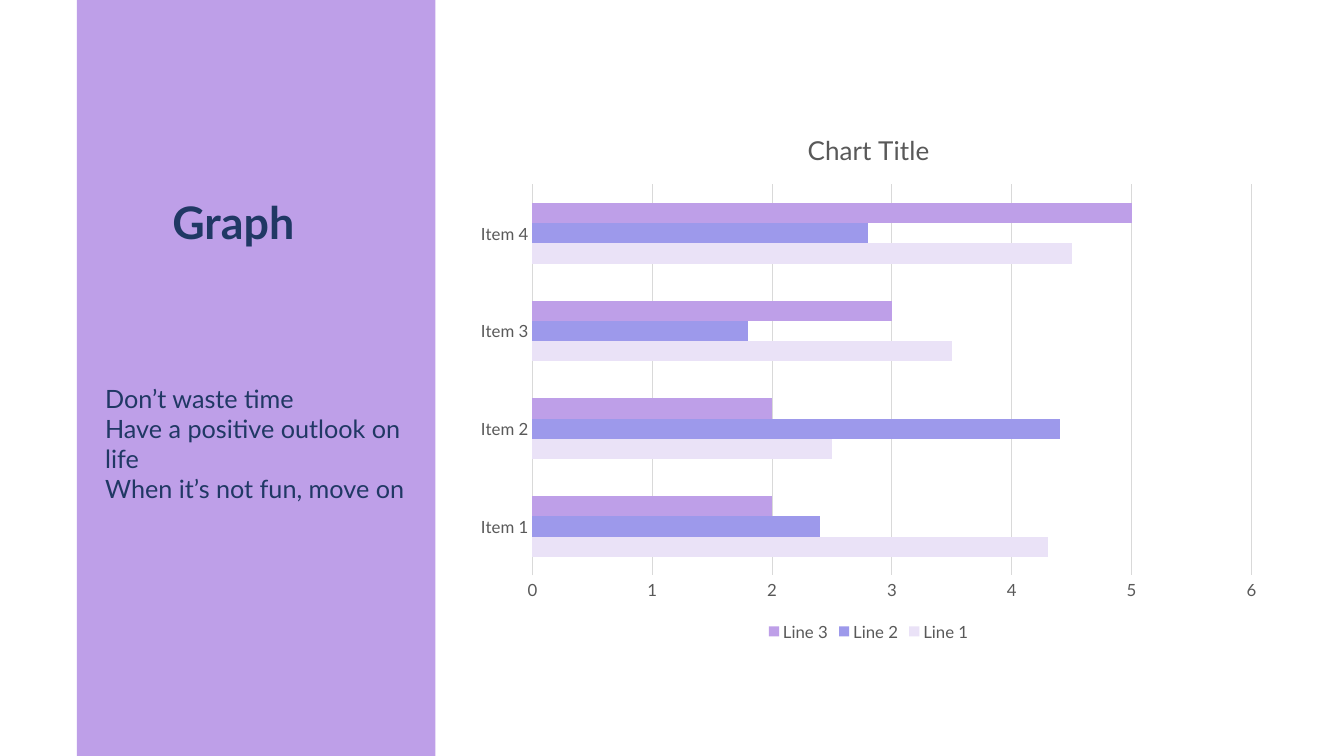
"""Build a slide with a coloured side panel and a clustered bar chart."""
import pptx
import pptx.chart.data
import pptx.dml.color
import pptx.enum.chart
import pptx.enum.shapes
import pptx.util

Pt = pptx.util.Pt
COLOURS = {
    "panel": "BE9FE8",
    "navy": "203864",
    "label": "595959",
    "grid": "D9D9D9",
    "Line 1": "EAE2F7",
    "Line 2": "9D99EB",
    "Line 3": "BE9FE8",
}
ITEMS = ["Item 1", "Item 2", "Item 3", "Item 4"]
LINES = {
    "Line 1": [4.3, 2.5, 3.5, 4.5],
    "Line 2": [2.4, 4.4, 1.8, 2.8],
    "Line 3": [2, 2, 3, 5],
}
ADVICE = [
    "Don’t waste time",
    "Have a positive outlook on life",
    "When it’s not fun, move on",
]


def colour(name):
    """Return the named colour."""
    return pptx.dml.color.RGBColor.from_string(COLOURS[name])


def apply(target, values):
    """Set each attribute of the target from a dict."""
    for attribute, value in values.items():
        setattr(target, attribute, value)


def style_font(font, size, colour_name, bold=False):
    """Set typeface, size, weight and colour."""
    apply(font, {"name": "Lato", "size": Pt(size), "bold": bold})
    font.color.rgb = colour(colour_name)


def style_line(line, colour_name):
    """Draw a thin line in the named colour."""
    line.width = Pt(0.75)
    line.color.rgb = colour(colour_name)


def add_panel(slide, box):
    """Add the coloured side panel."""
    panel = slide.shapes.add_shape(
        pptx.enum.shapes.MSO_SHAPE.RECTANGLE, *map(Pt, box))
    panel.shadow.inherit = False
    panel.fill.solid()
    panel.fill.fore_color.rgb = colour("panel")
    panel.line.fill.background()


def add_text(slide, box, paragraphs, size, bold=False):
    """Add a wrapped text box with one paragraph per string."""
    frame = slide.shapes.add_textbox(*map(Pt, box)).text_frame
    frame.word_wrap = True
    frame.text = "\n".join(paragraphs)
    for paragraph in frame.paragraphs:
        style_font(paragraph.runs[0].font, size, "navy", bold)


def style_axes(chart):
    """Style the item axis, the value axis and its gridlines."""
    for axis in (chart.category_axis, chart.value_axis):
        apply(axis, {
            "major_tick_mark": pptx.enum.chart.XL_TICK_MARK.NONE,
            "minor_tick_mark": pptx.enum.chart.XL_TICK_MARK.NONE,
        })
        style_font(axis.tick_labels.font, 12, "label")
    style_line(chart.category_axis.format.line, "grid")
    apply(chart.value_axis, {
        "minimum_scale": 0,
        "maximum_scale": 6,
        "major_unit": 1,
        "has_major_gridlines": True,
    })
    chart.value_axis.format.line.fill.background()
    style_line(chart.value_axis.major_gridlines.format.line, "grid")


def add_bar_chart(slide, box, title):
    """Add the bar chart with title and legend."""
    data = pptx.chart.data.CategoryChartData()
    data.categories = ITEMS
    for name, values in LINES.items():
        data.add_series(name, values)
    chart = slide.shapes.add_chart(
        pptx.enum.chart.XL_CHART_TYPE.BAR_CLUSTERED,
        *map(Pt, box), data).chart
    style_font(chart.font, 10, "label")
    apply(chart, {"has_title": True, "has_legend": True})
    chart.chart_title.text_frame.text = title
    heading = chart.chart_title.text_frame.paragraphs[0].runs[0]
    style_font(heading.font, 18.6, "label")
    chart.chart_title.include_in_layout = False
    apply(chart.legend, {
        "position": pptx.enum.chart.XL_LEGEND_POSITION.BOTTOM,
        "include_in_layout": False,
    })
    style_font(chart.legend.font, 12, "label")
    style_axes(chart)
    bars = chart.plots[0]
    apply(bars, {"gap_width": 182, "overlap": 0, "vary_by_categories": False})
    for series in bars.series:
        series.format.fill.solid()
        series.format.fill.fore_color.rgb = colour(series.name)
        series.invert_if_negative = False


def main():
    """Build and save the slide."""
    deck = pptx.Presentation()
    apply(deck, {"slide_width": Pt(960), "slide_height": Pt(540)})
    slide = deck.slides.add_slide(deck.slide_layouts[6])
    add_panel(slide, (55, 0, 256, 540))
    add_bar_chart(slide, (332, 79, 577, 382), "Chart Title")
    add_text(slide, (116, 135.5, 113, 46), ["Graph"], 32, bold=True)
    add_text(slide, (68, 270, 245.5, 73), ADVICE, 18)
    deck.save("out.pptx")


if __name__ == "__main__":
    main()
